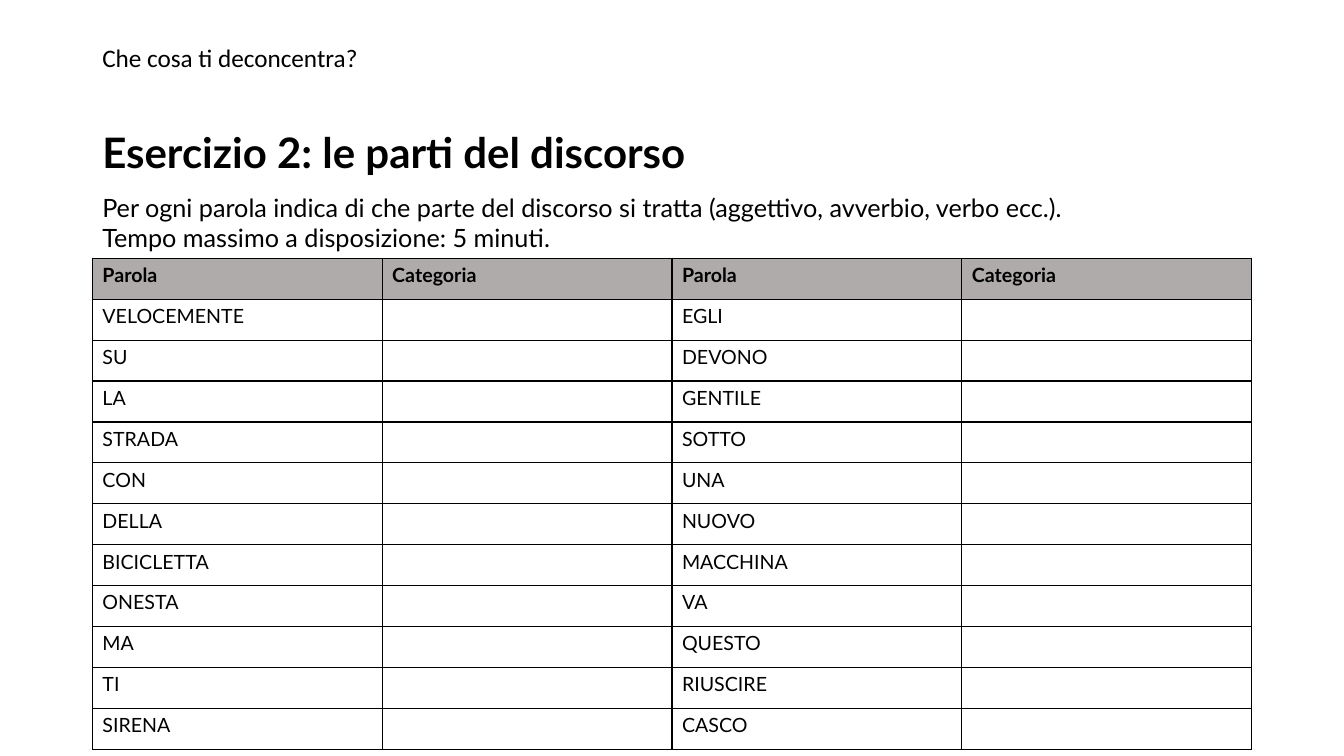
"""Builds the exercise slide on the parts of speech."""
from lxml import etree
from pptx import Presentation
from pptx.dml.color import RGBColor
from pptx.enum.text import MSO_ANCHOR
from pptx.oxml.ns import qn
from pptx.util import Pt

PX = 9525
BLACK = RGBColor(0x00, 0x00, 0x00)
GREY = RGBColor(0xAF, 0xAB, 0xAB)
TOP, MIDDLE = MSO_ANCHOR.TOP, MSO_ANCHOR.MIDDLE
LEFT, WIDTH, ROW_HEIGHT = 88, 1104, 39
HEADERS = ["Parola", "Categoria"] * 2
WORD_PAIRS = [
    ("VELOCEMENTE", "EGLI"),
    ("SU", "DEVONO"),
    ("LA", "GENTILE"),
    ("STRADA", "SOTTO"),
    ("CON", "UNA"),
    ("DELLA", "NUOVO"),
    ("BICICLETTA", "MACCHINA"),
    ("ONESTA", "VA"),
    ("MA", "QUESTO"),
    ("TI", "RIUSCIRE"),
    ("SIRENA", "CASCO"),
]


def write(tf, text, size=18, font="Lato", bold=False, spacing=None):
    """Write text into the first paragraph, with a line break at each newline."""
    p = tf.paragraphs[0]
    p.line_spacing = spacing
    for i, line in enumerate(text.split("\n")):
        if i:
            p.add_line_break()
        r = p.add_run()
        r.text = line
        r.font.size = Pt(size)
        r.font.name = font
        r.font.bold = bold
        r.font.color.rgb = BLACK


def add_text(s, text, top, width, height, anchor=TOP, wrap=True, **fmt):
    """Add a text box at the left margin."""
    sp = s.shapes.add_textbox(LEFT * PX, top * PX, width * PX, height * PX)
    tf = sp.text_frame
    tf.word_wrap = wrap
    tf.vertical_anchor = anchor
    write(tf, text, **fmt)


def add_borders(cell):
    """Give a cell thin black lines on all four sides."""
    tcPr = cell._tc.get_or_add_tcPr()
    for i, side in enumerate(("a:lnL", "a:lnR", "a:lnT", "a:lnB")):
        ln = etree.Element(qn(side), w=str(Pt(1)))
        fill = etree.SubElement(ln, qn("a:solidFill"))
        etree.SubElement(fill, qn("a:srgbClr"), val=str(BLACK))
        tcPr.insert(i, ln)


def add_word_table(s, top):
    """Add the table of words with empty columns for the answers."""
    rows = [HEADERS] + [[a, "", b, ""] for a, b in WORD_PAIRS]
    table = s.shapes.add_table(len(rows), len(HEADERS), LEFT * PX, top * PX,
                               WIDTH * PX, ROW_HEIGHT * len(rows) * PX).table
    table.horz_banding = False
    table.first_row = False
    for i, row in enumerate(rows):
        for j, text in enumerate(row):
            cell = table.cell(i, j)
            if i == 0:
                cell.fill.solid()
                cell.fill.fore_color.rgb = GREY
            else:
                cell.fill.background()
            add_borders(cell)
            if text:
                write(cell.text_frame, text, size=14, bold=i == 0)


def main():
    """Build and save the slide."""
    prs = Presentation()
    prs.slide_width, prs.slide_height = 1280 * PX, 720 * PX
    s = prs.slides.add_slide(prs.slide_layouts[6])
    add_text(s, "Esercizio 2: le parti del discorso", 118, WIDTH, 60,
             anchor=MIDDLE, size=30, bold=True, spacing=0.9)
    add_text(s, "Per ogni parola indica di che parte del discorso si tratta "
             "(aggettivo, avverbio, verbo ecc.).\n"
             "Tempo massimo a disposizione: 5 minuti.", 178, WIDTH, 68)
    add_word_table(s, 246)
    add_text(s, "Che cosa ti deconcentra?", 36, 266, 38, wrap=False, font="Calibri")
    prs.save("out.pptx")


if __name__ == "__main__":
    main()
